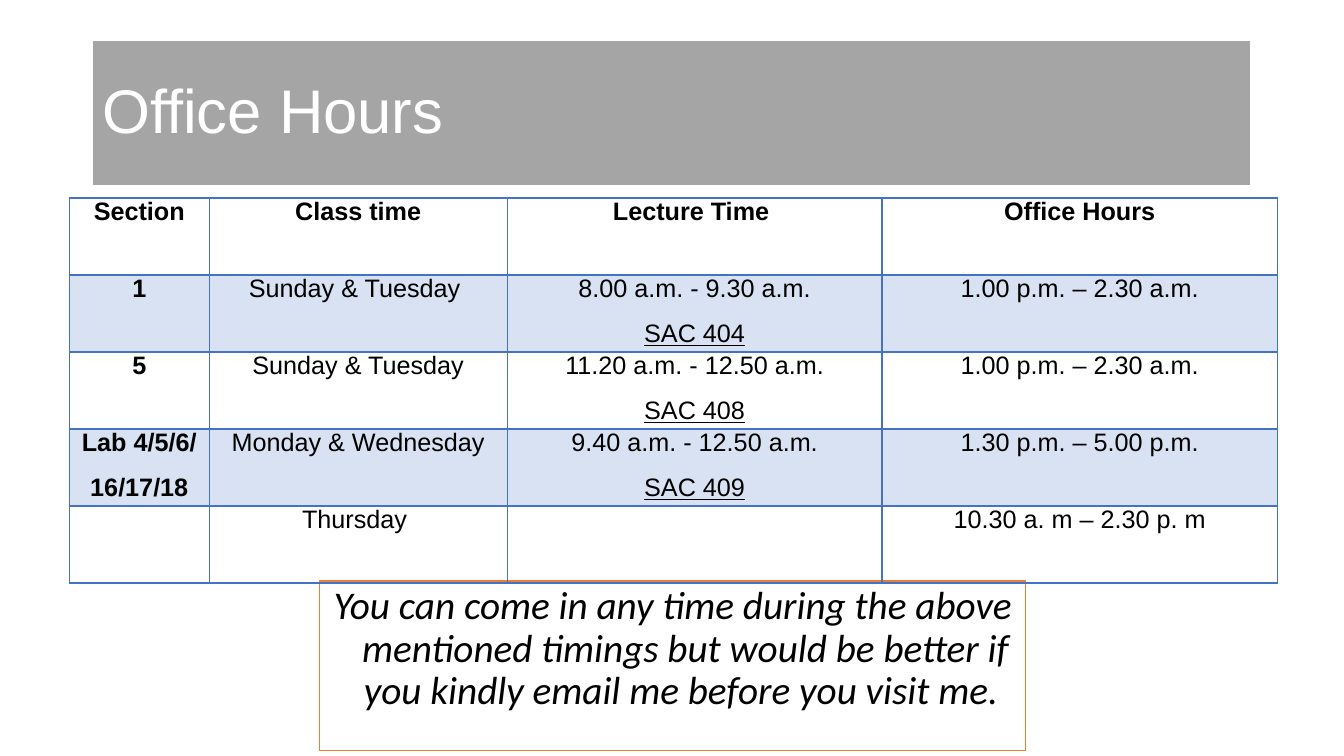
from lxml import etree
from pptx import Presentation
from pptx.dml.color import RGBColor
from pptx.enum.shapes import MSO_SHAPE
from pptx.enum.text import MSO_ANCHOR, PP_ALIGN
from pptx.oxml.ns import qn
from pptx.util import Cm, Pt

RECTANGLE = MSO_SHAPE.RECTANGLE
TOP, MIDDLE = MSO_ANCHOR.TOP, MSO_ANCHOR.MIDDLE
LEFT, CENTER = PP_ALIGN.LEFT, PP_ALIGN.CENTER

THEME = {
    "white": "FFFFFF", "black": "000000", "banner": "A5A5A5",
    "note_line": "ED7D31", "table": "4472C4", "band_alpha": "20000",
    "heading_font": "Arial", "note_font": "Calibri",
    "title_size": 44, "note_size": 28, "cell_size": 18,
}


def set_font(para, name, size, color):
    para.font.name = name
    para.font.size = Pt(size)
    para.font.color.rgb = RGBColor.from_string(color)


def add_panel(page, bounds, fill, line, line_width, anchor, text):
    panel = page.shapes.add_shape(RECTANGLE, *[Cm(length) for length in bounds])
    panel.shadow.inherit = False
    panel.fill.solid()
    panel.fill.fore_color.rgb = RGBColor.from_string(fill)
    panel.line.color.rgb = RGBColor.from_string(line)
    panel.line.width = Pt(line_width)
    panel.text_frame.word_wrap = True
    panel.text_frame.vertical_anchor = anchor
    para = panel.text_frame.paragraphs[0]
    para.text = text
    para.line_spacing = 0.9
    return para


deck = Presentation()
deck.slide_width, deck.slide_height = Cm(33.87), Cm(19.05)
page = deck.slides.add_slide(deck.slide_layouts[6])

title = add_panel(page, (2.33, 1.02, 29.21, 3.68), THEME["banner"],
                  THEME["white"], 1.5, MIDDLE, "Office Hours")
title.alignment = LEFT
set_font(title, THEME["heading_font"], THEME["title_size"], THEME["white"])

note = add_panel(page, (8.06, 14.64, 17.78, 4.27), THEME["white"],
                 THEME["note_line"], 1, TOP,
                 "You can come in any time during the above mentioned timings "
                 "but would be better if you kindly email me before you visit me. ")
note.alignment = CENTER
note.space_before = Pt(10)
set_font(note, THEME["note_font"], THEME["note_size"], THEME["black"])
note.font.italic = True
note_properties = note._p.get_or_add_pPr()
note_properties.set("marL", str(Cm(0.64)))
note_properties.set("indent", str(-Cm(0.64)))

schedule = [
    ["Section", "Class time", "Lecture Time ", "Office Hours"],
    ["1", "Sunday & Tuesday ", "8.00 a.m. - 9.30 a.m.\nSAC 404", "1.00 p.m. – 2.30 a.m."],
    ["5", "Sunday & Tuesday", "11.20 a.m. - 12.50 a.m.\nSAC 408", "1.00 p.m. – 2.30 a.m."],
    ["Lab 4/5/6/\n16/17/18", "Monday & Wednesday", "9.40 a.m. - 12.50 a.m.\nSAC 409",
     "1.30 p.m. – 5.00 p.m."],
    ["", "Thursday ", "", "10.30 a. m – 2.30 p. m"],
]
column_widths = [3.52, 7.51, 9.45, 9.96]
row_height = 1.94
table = page.shapes.add_table(
    len(schedule), len(column_widths), Cm(1.75), Cm(4.99),
    Cm(sum(column_widths)), Cm(row_height * len(schedule))).table
table.first_row = False
table.horz_banding = False
for column, width in zip(table.columns, column_widths):
    column.width = Cm(width)

for row_index, row in enumerate(schedule):
    table.rows[row_index].height = Cm(row_height)
    for column_index, text in enumerate(row):
        cell = table.cell(row_index, column_index)
        cell.margin_left = cell.margin_right = Cm(0.19)
        cell.margin_top = cell.margin_bottom = Cm(0)
        cell.vertical_anchor = TOP
        cell.text = text
        for line_index, para in enumerate(cell.text_frame.paragraphs):
            para.alignment = CENTER
            para.space_before = Pt(12)
            set_font(para, THEME["heading_font"], THEME["cell_size"], THEME["black"])
            para.font.bold = row_index == 0 or column_index == 0
            para.font.underline = column_index == 2 and line_index == 1

        properties = cell._tc.get_or_add_tcPr()
        for side in ("lnL", "lnR", "lnT", "lnB"):
            heavy = (row_index, side) in ((0, "lnB"), (1, "lnT"))
            border = etree.SubElement(properties, qn(f"a:{side}"), w=str(Pt(2 if heavy else 1)))
            paint = etree.SubElement(border, qn("a:solidFill"))
            etree.SubElement(paint, qn("a:srgbClr"), val=THEME["table"])

        if row_index % 2:
            cell.fill.solid()
            cell.fill.fore_color.rgb = RGBColor.from_string(THEME["table"])
            color = properties.find(qn("a:solidFill")).find(qn("a:srgbClr"))
            etree.SubElement(color, qn("a:alpha"), val=THEME["band_alpha"])
        else:
            cell.fill.background()

deck.save("out.pptx")
